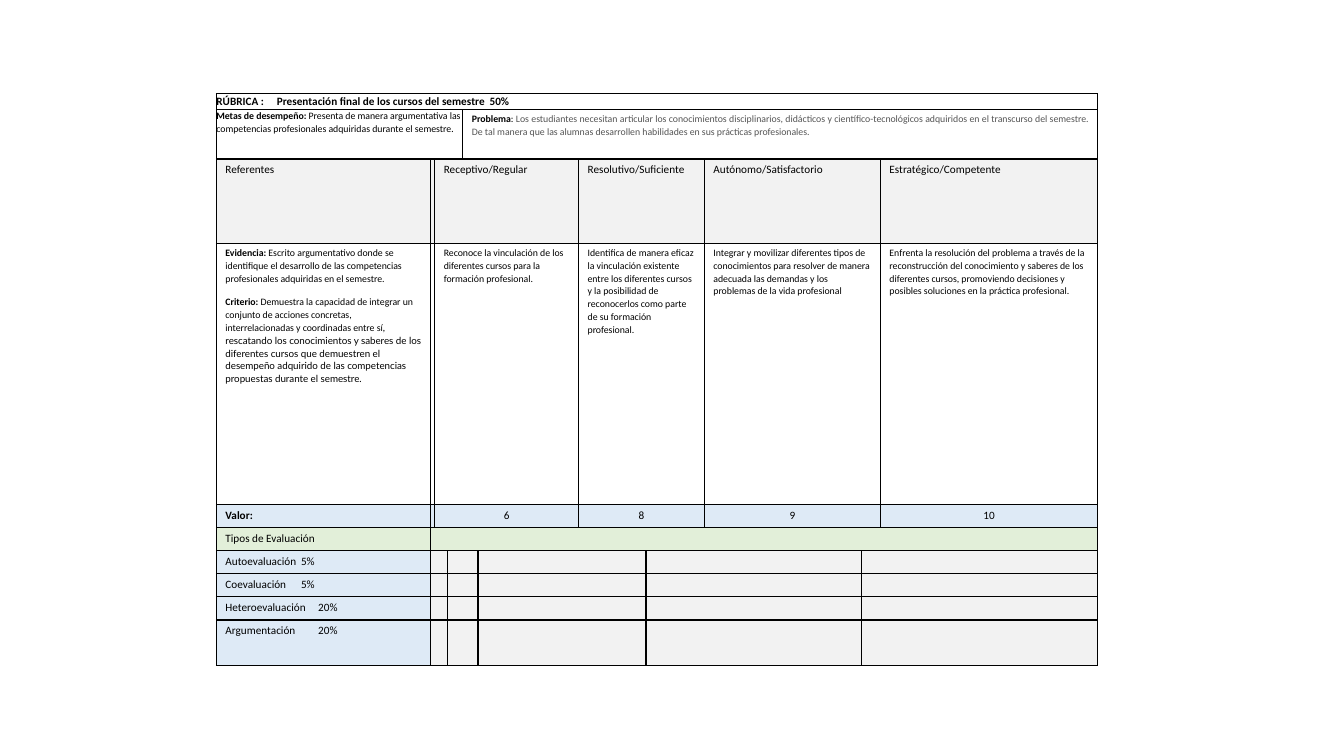
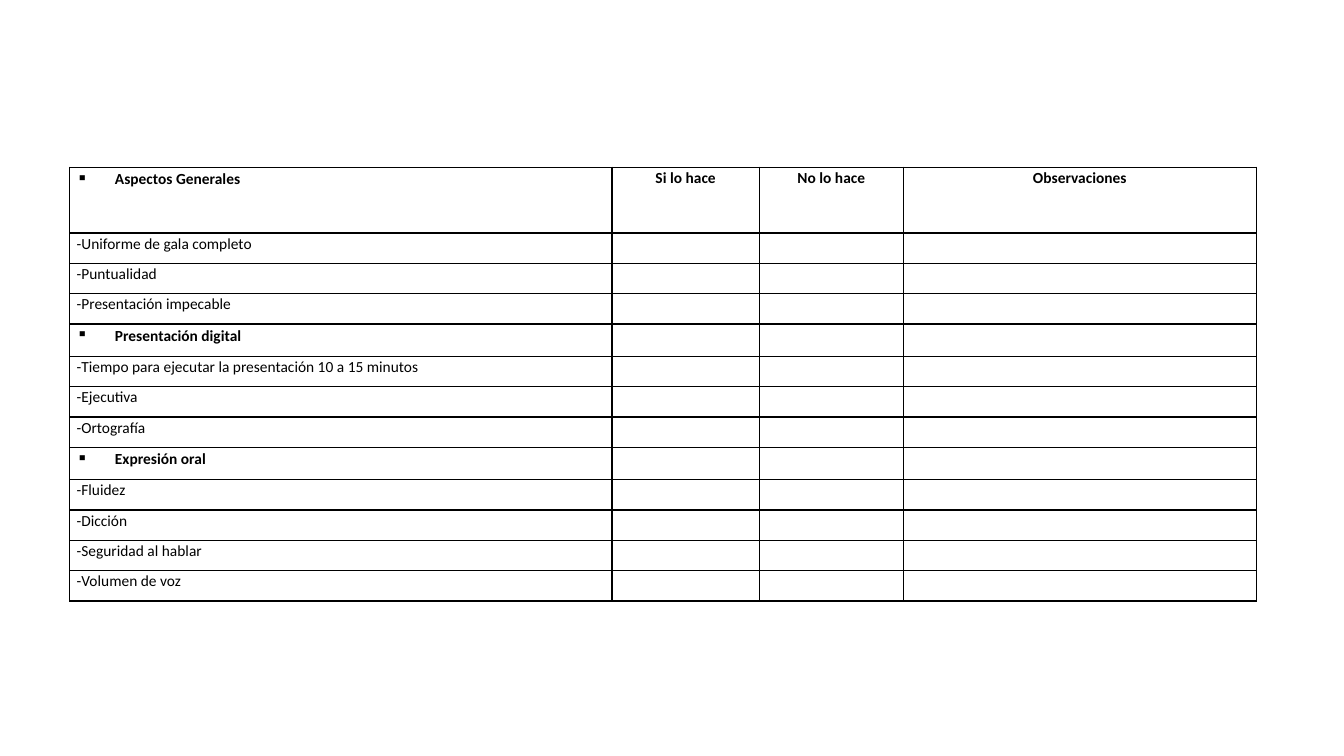
import itertools

import pptx
import pptx.dml.color
import pptx.enum.text
import pptx.oxml
import pptx.oxml.ns
import pptx.util
from lxml import etree

COLORS = {
    "paper": "FFFFFF",
    "ink": "000000",
    "muted": "545454",
    "grey": "F2F2F2",
    "blue": "DEEAF6",
    "green": "E2EFD9",
}
FONT = "Calibri"
ACCENT_FONT = "Lato"
SLIDE_SIZE = (13.33, 7.5)
BORDER_POINTS = 1
LEFT, CENTER, JUSTIFY = (
    pptx.enum.text.PP_ALIGN.LEFT,
    pptx.enum.text.PP_ALIGN.CENTER,
    pptx.enum.text.PP_ALIGN.JUSTIFY,
)
NO_INSET = (0, 0)
CELL_INSET = (0.09, 0.03)
LIST_INSET = (0.07, 0)


def rgb(name):
    return pptx.dml.color.RGBColor.from_string(COLORS[name])


def child(parent, tag, **attributes):
    return etree.SubElement(parent, pptx.oxml.ns.qn(tag), attributes)


# Shared table parts
def prepare_cell(cell, size):
    """Give a cell thin borders, no insets and a small empty line."""
    properties = cell._tc.get_or_add_tcPr()
    for side in ("a:lnL", "a:lnR", "a:lnT", "a:lnB"):
        edge = child(properties, side, w=str(pptx.util.Pt(BORDER_POINTS)))
        child(child(edge, "a:solidFill"), "a:srgbClr", val=COLORS["ink"])
    set_inset(cell, NO_INSET)
    paint(cell, "paper")
    child(cell.text_frame.paragraphs[0]._p, "a:endParaRPr", sz=str(size * 100))


def set_inset(cell, inset):
    cell.margin_left = cell.margin_right = pptx.util.Inches(inset[0])
    cell.margin_top = cell.margin_bottom = pptx.util.Inches(inset[1])


def paint(cell, color):
    cell.fill.solid()
    cell.fill.fore_color.rgb = rgb(color)


def add_grid(slide, box, columns, rows, size):
    """Add a table; box is in percent of the slide, columns and rows are weights."""
    left, top, width, height = (
        pptx.util.Inches(share * length / 100)
        for share, length in zip(box, SLIDE_SIZE * 2)
    )
    grid = slide.shapes.add_table(
        len(rows), len(columns), left, top, width, height
    ).table
    grid.first_row = grid.horz_banding = False
    for column, weight in zip(grid.columns, columns):
        column.width = int(width * weight / sum(columns))
    for row, weight in zip(grid.rows, rows):
        row.height = int(height * weight / sum(rows))
    for cell in grid.iter_cells():
        prepare_cell(cell, size)
    return grid


def merge_row(grid, row, spans):
    """Merge a row into bands of the given spans and return their first cells."""
    starts = itertools.accumulate(spans[:-1], initial=0)
    bands = []
    for start, span in zip(starts, spans):
        band = grid.cell(row, start)
        if span > 1:
            band.merge(grid.cell(row, start + span - 1))
        bands.append(band)
    return bands


def write(cell, paragraphs, size, inset=CELL_INSET, align=LEFT, spacing=1.07,
          after=0, tabs=(), bullet=None):
    """Write paragraphs, each a list of (text, changes) runs."""
    set_inset(cell, inset)
    frame = cell.text_frame
    for index, runs in enumerate(paragraphs):
        paragraph = frame.add_paragraph() if index else frame.paragraphs[0]
        paragraph.alignment = align
        paragraph.line_spacing = spacing
        paragraph.space_after = pptx.util.Pt(after)
        properties = paragraph._p.get_or_add_pPr()
        if bullet:
            indent = pptx.util.Inches(0.38)
            properties.set("marL", str(indent))
            properties.set("indent", str(-indent))
            child(properties, "a:buChar", char=bullet)
        if tabs:
            stops = child(properties, "a:tabLst")
            for stop in tabs:
                child(stops, "a:tab", pos=str(pptx.util.Inches(stop)), algn="l")
        for text, changes in runs:
            run = paragraph.add_run()
            run.text = text
            run.font.size = pptx.util.Pt(size)
            run.font.name = changes.get("font", FONT)
            run.font.bold = changes.get("bold", False)
            run.font.color.rgb = rgb(changes.get("color", "ink"))


BOLD = {"bold": True}
PLAIN = {}
ACCENT = {"font": ACCENT_FONT}

# Rubric content
LEVEL_SPANS = (1, 1, 4, 2, 2, 1)
SCORE_SPANS = (1, 2, 2, 2, 2, 2)
GOALS = [
    ("Metas de desempeño: ", BOLD),
    ("Presenta de manera argumentativa las competencias profesionales "
     "adquiridas durante el semestre", PLAIN),
    (".", ACCENT),
]
PROBLEM = [
    ("Problema", BOLD),
    (": ", PLAIN),
    ("Los estudiantes necesitan articular los conocimientos disciplinarios, "
     "didácticos y científico-tecnológicos adquiridos en el transcurso del "
     "semestre. De tal manera que las alumnas desarrollen habilidades en sus "
     "prácticas profesionales.", {"color": "muted"}),
]
LEVELS = ["Referentes", "", "Receptivo/Regular", "Resolutivo/Suficiente",
          "Autónomo/Satisfactorio", "Estratégico/Competente"]
EVIDENCE = [
    [
        ("Evidencia: ", BOLD),
        ("Escrito argumentativo donde se identifique el desarrollo de las "
         "competencias profesionales adquiridas en el semestre.", PLAIN),
    ],
    [
        ("Criterio:", BOLD),
        (" Demuestra la capacidad de integrar un conjunto de acciones "
         "concretas, interrelacionadas y coordinadas entre sí", PLAIN),
        (", rescatando los conocimientos y saberes de los diferentes cursos "
         "que demuestren el desempeño adquirido de las competencias "
         "propuestas durante el semestre.", ACCENT),
    ],
]
DESCRIPTORS = [
    "Reconoce la vinculación de los diferentes cursos para la formación "
    "profesional.",
    "Identifica de manera eficaz la vinculación existente entre los "
    "diferentes cursos y la posibilidad de reconocerlos como parte de su "
    "formación profesional.",
    "Integrar y movilizar diferentes tipos de conocimientos para resolver de "
    "manera adecuada las demandas y los problemas de la vida profesional",
    "Enfrenta la resolución del problema a través de la reconstrucción del "
    "conocimiento y saberes de los diferentes cursos, promoviendo decisiones "
    "y posibles soluciones en la práctica profesional.",
]
VALUES = ["6", "8", "9", "10"]
EVALUATIONS = ["Autoevaluación\t5%", "Coevaluación\t5%",
               "Heteroevaluación\t20%", "Argumentación\t20%"]

# Checklist content
CHECKLIST_HEADINGS = ["Si lo hace", "No lo hace", "Observaciones"]
CHECKLIST = {
    "Aspectos Generales": [
        "Uniforme de gala completo", "Puntualidad", "Presentación impecable"],
    "Presentación digital": [
        "Tiempo para ejecutar la presentación 10 a 15 minutos", "Ejecutiva",
        "Ortografía"],
    "Expresión oral": [
        "Fluidez", "Dicción", "Seguridad al hablar", "Volumen de voz"],
}


def add_rubric(slide, box):
    columns = [2.13, 0.04, 0.13, 0.15, 0.15, 1, 0.67, 0.58, 1.56, 0.19, 2.16]
    rows = [0.16, 0.49, 0.84, 2.6, 0.23, 0.23, 0.23, 0.23, 0.23, 0.45]
    label, body = 8, 7
    grid = add_grid(slide, box, columns, rows, body)

    # Title and goals
    title, = merge_row(grid, 0, (11,))
    write(title, [[("RÚBRICA :\tPresentación final de los cursos del semestre\t50%",
                    BOLD)]], label, NO_INSET, tabs=(0.6, 2.71))
    goals, problem = merge_row(grid, 1, (4, 7))
    write(goals, [GOALS], body, NO_INSET)
    write(problem, [PROBLEM], body, align=JUSTIFY, after=8)

    # Levels and their descriptors
    for cell, level in zip(merge_row(grid, 2, LEVEL_SPANS), LEVELS):
        paint(cell, "grey")
        if level:
            write(cell, [[(level, PLAIN)]], label)
    evidence, _, *descriptors = merge_row(grid, 3, LEVEL_SPANS)
    write(evidence, EVIDENCE, body, after=8)
    for cell, descriptor in zip(descriptors, DESCRIPTORS):
        write(cell, [[(descriptor, PLAIN)]], body, after=8)

    # Values
    value_cells = merge_row(grid, 4, LEVEL_SPANS)
    for cell in value_cells:
        paint(cell, "blue")
    write(value_cells[0], [[("Valor:", BOLD)]], label)
    for cell, value in zip(value_cells[2:], VALUES):
        write(cell, [[(value, PLAIN)]], label, align=CENTER)

    # Evaluation types
    evaluation_cells = merge_row(grid, 5, (1, 10))
    for cell in evaluation_cells:
        paint(cell, "green")
    write(evaluation_cells[0], [[("Tipos de Evaluación", PLAIN)]], label)
    for row, evaluation in enumerate(EVALUATIONS, 6):
        name, *scores = merge_row(grid, row, SCORE_SPANS)
        paint(name, "blue")
        tab = 0.75 if evaluation.endswith("\t5%") else 0.92
        write(name, [[(evaluation, PLAIN)]], label, tabs=(tab,))
        for score in scores:
            paint(score, "grey")


def add_checklist(slide, box):
    size = 11
    lines = [
        (text, is_section)
        for section, items in CHECKLIST.items()
        for text, is_section in [(section, True)] + [(f"-{item}", False) for item in items]
    ]
    rows = [0.32 if is_section else 0.3 for _, is_section in lines]
    rows[0] = 0.65
    grid = add_grid(slide, box, [5.38, 1.46, 1.43, 3.5], rows, size)
    for column, heading in enumerate(CHECKLIST_HEADINGS, 1):
        write(grid.cell(0, column), [[(heading, BOLD)]], size, LIST_INSET, CENTER)
    for row, (text, is_section) in enumerate(lines):
        cell = grid.cell(row, 0)
        if is_section:
            write(cell, [[(text, BOLD)]], size, LIST_INSET, spacing=1.15, bullet="▪")
        else:
            write(cell, [[(text, PLAIN)]], size, LIST_INSET, JUSTIFY)


def main():
    deck = pptx.Presentation()
    deck.slide_width, deck.slide_height = map(pptx.util.Inches, SLIDE_SIZE)
    blank = deck.slide_layouts[6]
    add_rubric(deck.slides.add_slide(blank), (16.1, 12.4, 65.6, 75.6))
    add_checklist(deck.slides.add_slide(blank), (5.18, 22.13, 88.3, 57.4))
    deck.save("out.pptx")


if __name__ == "__main__":
    main()
